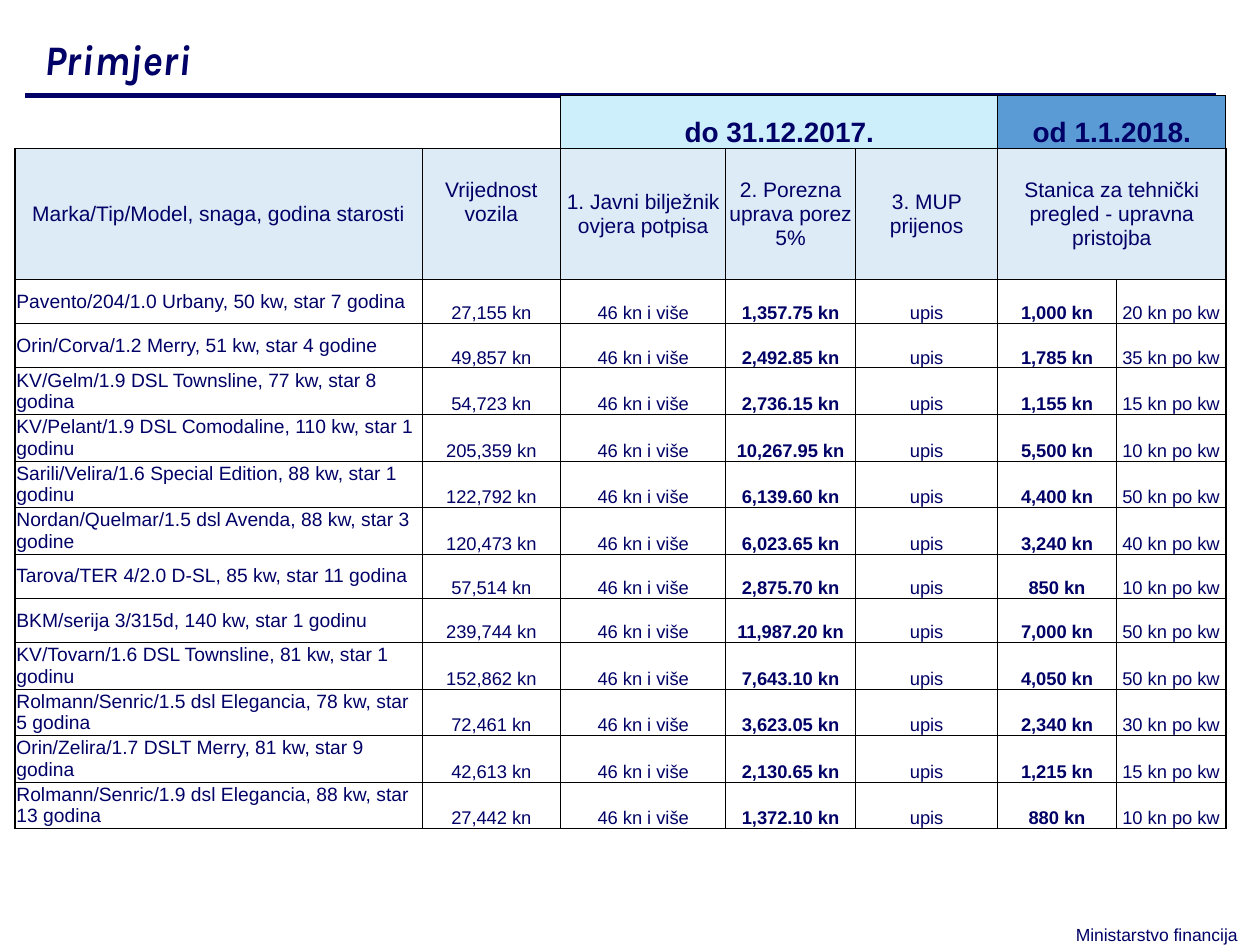
from lxml import etree
from pptx import Presentation
from pptx import util as u
from pptx.dml.color import RGBColor
from pptx.enum import shapes, text
from pptx.oxml import ns

COLORS = {
    "navy": "000066",
    "border": "000000",
    "before": "CDEEFB",
    "after": "5B9BD5",
    "header": "DDEBF7",
}
NO_STYLE = "{2D5ABB26-0587-4C30-8999-92F81FD0307C}"
THIN, THICK = 0.5, 1
CENTER, LEFT = text.PP_ALIGN.CENTER, text.PP_ALIGN.LEFT
MIDDLE, BOTTOM = text.MSO_ANCHOR.MIDDLE, text.MSO_ANCHOR.BOTTOM

COLUMN_WIDTHS = [2.23, 0.65, 0.35, 1.1, 1.31, 1.03, 1.13, 0.94, 0.87]
PERIOD_HEIGHT, HEADER_HEIGHT = 0.42, 1.04
ONE_LINE, TWO_LINES = 0.35, 0.37

# First column, last column, label, fill
PERIODS = [(4, 6, "do 31.12.2017.", "before"), (7, 8, "od 1.1.2018.", "after")]
HEADERS = [
    (0, 2, "Marka/Tip/Model, snaga, godina starosti"),
    (3, 3, "Vrijednost vozila"),
    (4, 4, "1. Javni bilježnik ovjera potpisa"),
    (5, 5, "2. Porezna uprava porez 5%"),
    (6, 6, "3. MUP prijenos"),
    (7, 8, "Stanica za tehnički pregled - upravna pristojba"),
]
# Vehicle, value, 5% tax, new fee, fee per kw, row height
VEHICLES = [
    ("Pavento/204/1.0 Urbany, 50 kw, star 7 godina", "27,155", "1,357.75", "1,000", 20, ONE_LINE),
    ("Orin/Corva/1.2 Merry, 51 kw, star 4 godine", "49,857", "2,492.85", "1,785", 35, ONE_LINE),
    ("KV/Gelm/1.9 DSL Townsline, 77 kw, star 8 godina", "54,723", "2,736.15", "1,155", 15, TWO_LINES),
    ("KV/Pelant/1.9 DSL Comodaline, 110 kw, star 1 godinu", "205,359", "10,267.95", "5,500", 10, TWO_LINES),
    ("Sarili/Velira/1.6 Special Edition, 88 kw, star 1 godinu", "122,792", "6,139.60", "4,400", 50, TWO_LINES),
    ("Nordan/Quelmar/1.5 dsl Avenda, 88 kw, star 3 godine", "120,473", "6,023.65", "3,240", 40, TWO_LINES),
    ("Tarova/TER 4/2.0 D-SL, 85 kw, star 11 godina", "57,514", "2,875.70", "850", 10, ONE_LINE),
    ("BKM/serija 3/315d, 140 kw, star 1 godinu", "239,744", "11,987.20", "7,000", 50, ONE_LINE),
    ("KV/Tovarn/1.6 DSL Townsline, 81 kw, star 1 godinu", "152,862", "7,643.10", "4,050", 50, TWO_LINES),
    ("Rolmann/Senric/1.5 dsl Elegancia, 78 kw, star 5 godina", "72,461", "3,623.05", "2,340", 30, TWO_LINES),
    ("Orin/Zelira/1.7 DSLT Merry, 81 kw, star 9 godina", "42,613", "2,130.65", "1,215", 15, TWO_LINES),
    ("Rolmann/Senric/1.9 dsl Elegancia, 88 kw, star 13 godina", "27,442", "1,372.10", "880", 10, TWO_LINES),
]


def rgb(name):
    return RGBColor.from_string(COLORS[name])


def write(frame, content, size, align=LEFT, bold=False, italic=False, font="Arial"):
    frame.text = content
    paragraph = frame.paragraphs[0]
    paragraph.alignment = align
    for run in paragraph.runs:
        run.font.name = font
        run.font.size = u.Pt(size)
        run.font.bold = bold
        run.font.italic = italic
        run.font.color.rgb = rgb("navy")


def add_text(slide, box, margins, content, size, anchor, **style):
    frame = slide.shapes.add_textbox(*map(u.Inches, box)).text_frame
    frame.margin_left, frame.margin_top, frame.margin_right, frame.margin_bottom = map(u.Inches, margins)
    frame.vertical_anchor = anchor
    frame.word_wrap = True
    write(frame, content, size, **style)


def add_rule(slide, left, top, width):
    rule = slide.shapes.add_connector(
        shapes.MSO_CONNECTOR.STRAIGHT,
        u.Inches(left), u.Inches(top), u.Inches(left + width), u.Inches(top))
    rule.line.color.rgb = rgb("navy")
    rule.line.width = u.Pt(3)
    etree.SubElement(rule._element.spPr, ns.qn("a:effectLst"))


def set_borders(cell, widths):
    """Draw the sides in widths (L, R, T, B to points) and hide the others."""
    properties = cell._tc.get_or_add_tcPr()
    for side in "LRTB":
        line = etree.SubElement(properties, ns.qn(f"a:ln{side}"))
        if side in widths:
            line.set("w", str(u.Pt(widths[side])))
            fill = etree.SubElement(line, ns.qn("a:solidFill"))
            etree.SubElement(fill, ns.qn("a:srgbClr")).set("val", COLORS["border"])
        else:
            etree.SubElement(line, ns.qn("a:noFill"))


def border_widths(cell, row, column, last_row, last_column):
    if row == 0 and column < PERIODS[0][0]:
        return {"B": THICK}
    widths = {
        "T": THICK if row == 1 else THIN,
        "B": THICK if row in (0, last_row) else THIN,
    }
    if not cell.is_spanned:
        end = column + (cell.span_width if cell.is_merge_origin else 1) - 1
        widths["L"] = THICK if row and column == 0 else THIN
        widths["R"] = THICK if row and end == last_column else THIN
    return widths


def write_cell(table, row, first, last, content, size, anchor=BOTTOM, **style):
    """Write into one cell, merged from the first to the last column."""
    cell = table.cell(row, first)
    if last > first:
        cell.merge(table.cell(row, last))
    write(cell.text_frame, content, size, **style)
    cell.vertical_anchor = anchor


def add_price_table(slide, left, top):
    heights = [PERIOD_HEIGHT, HEADER_HEIGHT] + [vehicle[-1] for vehicle in VEHICLES]
    frame = slide.shapes.add_table(
        len(heights), len(COLUMN_WIDTHS), u.Inches(left), u.Inches(top),
        u.Inches(sum(COLUMN_WIDTHS)), u.Inches(sum(heights)))
    table = frame.table
    table._tbl.tblPr.find(ns.qn("a:tableStyleId")).text = NO_STYLE
    table.first_row = table.horz_banding = False
    for column, width in zip(table.columns, COLUMN_WIDTHS):
        column.width = u.Inches(width)
    for row, height in zip(table.rows, heights):
        row.height = u.Inches(height)

    fills = {}
    for first, last, label, color in PERIODS:
        write_cell(table, 0, first, last, label, 16, align=CENTER, bold=True)
        fills[0, first] = color
    for first, last, label in HEADERS:
        write_cell(table, 1, first, last, label, 12, MIDDLE, align=CENTER)
        fills[1, first] = "header"
    for row, (vehicle, value, tax, fee, rate, _) in enumerate(VEHICLES, 2):
        write_cell(table, row, 0, 2, vehicle, 11, MIDDLE)
        details = [f"{value} kn", "46 kn i više", f"{tax} kn", "upis", f"{fee} kn", f"{rate} kn po kw"]
        for column, content in enumerate(details, 3):
            write_cell(table, row, column, column, content, 10.5, align=CENTER, bold=column in (5, 7))

    for row in range(len(heights)):
        for column in range(len(COLUMN_WIDTHS)):
            cell = table.cell(row, column)
            cell.margin_left = cell.margin_right = u.Inches(0.01)
            cell.margin_top = cell.margin_bottom = 0
            set_borders(cell, border_widths(cell, row, column, len(heights) - 1, len(COLUMN_WIDTHS) - 1))
            if (row, column) in fills:
                cell.fill.solid()
                cell.fill.fore_color.rgb = rgb(fills[row, column])
            else:
                cell.fill.background()
    # The value heading sits half a text line higher than its neighbours
    table.cell(1, 3).margin_bottom = u.Inches(0.19)


def main():
    presentation = Presentation()
    presentation.slide_width, presentation.slide_height = u.Inches(10), u.Inches(7.5)
    slide = presentation.slides.add_slide(presentation.slide_layouts[6])
    add_rule(slide, 0.2, 0.76, 9.45)
    add_text(slide, (8.48, 7.33, 1.4, 0.17), (0, 0, 0, 0), "Ministarstvo financija", 10,
             text.MSO_ANCHOR.TOP, align=CENTER)
    add_text(slide, (0.35, 0.21, 8.5, 0.51), (0, 0.05, 0.1, 0.05), "Primjeri", 24,
             MIDDLE, bold=True, italic=True, font="Karla")
    add_price_table(slide, 0.12, 0.76)
    presentation.save("out.pptx")


if __name__ == "__main__":
    main()
